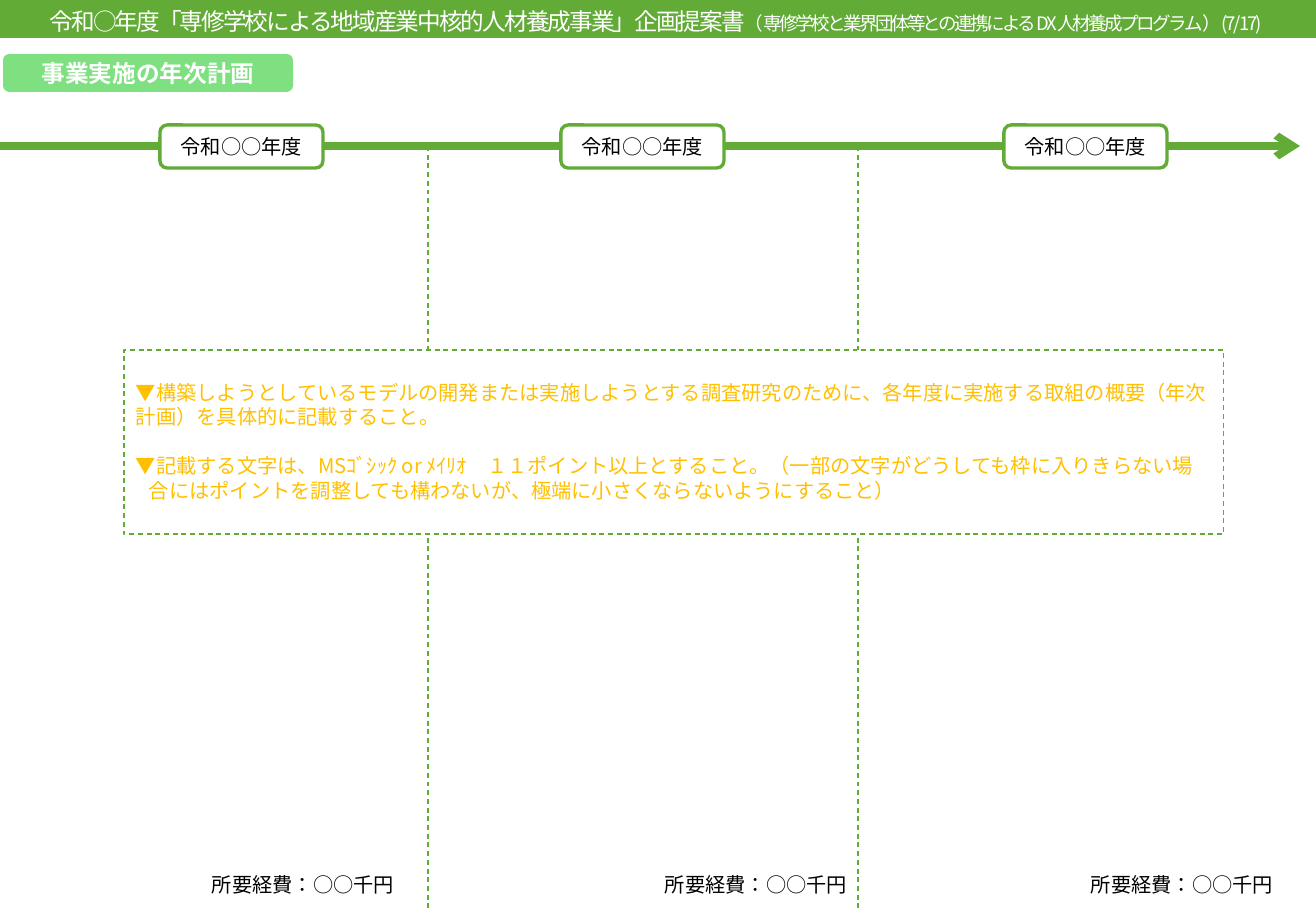
from lxml import etree
from pptx import Presentation
from pptx.dml.color import RGBColor
from pptx.enum.dml import MSO_LINE
from pptx.enum.lang import MSO_LANGUAGE_ID
from pptx.enum.shapes import MSO_CONNECTOR, MSO_SHAPE
from pptx.enum.text import MSO_ANCHOR, MSO_AUTO_SIZE, PP_ALIGN
from pptx.oxml.ns import qn
from pptx.util import Emu, Pt

EMU_PER_PX = 7526
SLIDE_WIDTH, SLIDE_HEIGHT = 1316, 911
HEADER_HEIGHT = 38
TIMELINE_TOP = 146
GREEN, LIGHT_GREEN, WHITE, BLACK, AMBER = "62AB37", "7EE081", "FFFFFF", "000000", "FFC000"
JAPANESE_FONT, LABEL_FONT = "Noto Sans CJK JP", "Karla"
LINE_PITCH = 14.5

HEADING_RUNS = [
    ("令和○年度「専修学校による地域産業中核的人材養成事業」企画提案書", 14, -1.2),
    ("（", 11, -1.2),
    ("専修学校と業界団体等との連携によるDX人材養成プログラム", 11, -1.6),
    ("）(7/17)", 11, -1.2),
]
NOTES = [
    ("▼構築しようとしているモデルの開発または実施しようとする調査研究のために、"
     "各年度に実施する取組の概要（年次計画）を具体的に記載すること。", 0, 0),
    ("▼記載する文字は、MSｺﾞｼｯｸ or ﾒｲﾘｵ\u3000１１ポイント以上とすること。"
     "（一部の文字がどうしても枠に入りきらない場合にはポイントを調整しても構わないが、"
     "極端に小さくならないようにすること）", 13, LINE_PITCH),
]
YEAR_LABEL_LEFTS = [160, 561, 1004]
COST_LEFTS = [212, 665, 1091]
DIVIDER_LEFTS = [428, 858]
YEAR_LABEL_WIDTH, YEAR_LABEL_HEIGHT = 163, 43
COST_WIDTH, COST_HEIGHT = 190, 30


def px(length):
    return Emu(length * EMU_PER_PX)


def color(value):
    return RGBColor.from_string(value)


def add_text(paragraph, text, size=12, font=JAPANESE_FONT, text_color=BLACK, bold=False, spacing=0):
    run = paragraph.add_run()
    run.text = text
    run.font.size = Pt(size)
    run.font.name = font
    run.font.bold = bold
    run.font.color.rgb = color(text_color)
    run.font.language_id = MSO_LANGUAGE_ID.JAPANESE
    properties = run._r.get_or_add_rPr()
    properties.set("spc", str(round(spacing * 100)))
    east_asian = etree.Element(qn("a:ea"), typeface=JAPANESE_FONT)
    properties.find(qn("a:latin")).addnext(east_asian)


def format_frame(shape, insets=(0, 0, 0, 0), anchor=MSO_ANCHOR.MIDDLE, wrap=True):
    frame = shape.text_frame
    frame.word_wrap = wrap
    frame.auto_size = MSO_AUTO_SIZE.NONE
    frame.vertical_anchor = anchor
    frame.margin_left, frame.margin_top, frame.margin_right, frame.margin_bottom = map(px, insets)
    return frame


def format_line(line, width, dash=None):
    line.color.rgb = color(GREEN)
    line.width = Pt(width)
    line.dash_style = dash


def add_box(slide, kind, box, fill):
    shape = slide.shapes.add_shape(kind, *map(px, box))
    shape.shadow.inherit = False
    shape.fill.solid()
    shape.fill.fore_color.rgb = color(fill)
    shape.line.fill.background()
    return shape


def add_line(slide, start, end, width, dash=None):
    connector = slide.shapes.add_connector(MSO_CONNECTOR.STRAIGHT, *map(px, start + end))
    format_line(connector.line, width, dash)
    etree.SubElement(connector._element.spPr, qn("a:effectLst"))
    return connector


def add_label(slide, box, text, fill, **text_format):
    shape = add_box(slide, MSO_SHAPE.ROUNDED_RECTANGLE, box, fill)
    paragraph = format_frame(shape).paragraphs[0]
    paragraph.alignment = PP_ALIGN.CENTER
    add_text(paragraph, text, font=LABEL_FONT, **text_format)
    return shape


def add_header(slide, box):
    left, top, width, height = box
    add_box(slide, MSO_SHAPE.RECTANGLE, box, GREEN)
    title = slide.shapes.title
    title.left, title.top, title.width, title.height = map(px, (left, top + 1, width - 4, height + 2))
    title.element.getparent().append(title.element)
    paragraph = format_frame(title).paragraphs[0]
    paragraph.alignment = PP_ALIGN.CENTER
    for text, size, spacing in HEADING_RUNS:
        add_text(paragraph, text, size=size, text_color=WHITE, spacing=spacing)


def add_timeline(slide, box):
    left, top, width, height = box
    bottom = top + height
    for divider_left in DIVIDER_LEFTS:
        divider_x = left + divider_left
        add_line(slide, (divider_x, top), (divider_x, bottom), 0.75, MSO_LINE.DASH)

    time_axis = add_line(slide, (left, top), (left + width, top), 4.5)
    etree.SubElement(time_axis.line._get_or_add_ln(), qn("a:tailEnd"), type="arrow")

    label_top = top - YEAR_LABEL_HEIGHT // 2
    for label_left in YEAR_LABEL_LEFTS:
        label_box = (left + label_left, label_top, YEAR_LABEL_WIDTH, YEAR_LABEL_HEIGHT)
        label = add_label(slide, label_box, "令和○○年度", WHITE)
        format_line(label.line, 2)

    for cost_left in COST_LEFTS:
        cost_box = (left + cost_left, bottom - 42, COST_WIDTH, COST_HEIGHT)
        cost = slide.shapes.add_textbox(*map(px, cost_box))
        add_text(format_frame(cost, wrap=False).paragraphs[0], "所要経費：○○千円")


def add_notes(slide, box):
    shape = add_box(slide, MSO_SHAPE.RECTANGLE, box, WHITE)
    format_line(shape.line, 0.75, MSO_LINE.DASH)
    frame = format_frame(shape, insets=(12, 30, 12, 6), anchor=MSO_ANCHOR.TOP)
    for _ in NOTES[1:]:
        frame.add_paragraph()
    for paragraph, (text, indent, space_before) in zip(frame.paragraphs, NOTES):
        paragraph.alignment = PP_ALIGN.LEFT
        paragraph.line_spacing = Pt(LINE_PITCH)
        paragraph.space_before = Pt(space_before)
        properties = paragraph._p.get_or_add_pPr()
        properties.set("marL", str(px(indent)))
        properties.set("indent", str(px(-indent)))
        add_text(paragraph, text, text_color=AMBER)


def add_section_heading(slide, box):
    add_label(slide, box, "事業実施の年次計画", LIGHT_GREEN, size=14, text_color=WHITE, bold=True)


def main():
    presentation = Presentation()
    presentation.slide_width = px(SLIDE_WIDTH)
    presentation.slide_height = px(SLIDE_HEIGHT)
    title_only_layout = presentation.slide_layouts[5]
    slide = presentation.slides.add_slide(title_only_layout)
    add_timeline(slide, (0, TIMELINE_TOP, 1300, SLIDE_HEIGHT - TIMELINE_TOP))
    add_notes(slide, (124, 350, 1100, 184))
    add_section_heading(slide, (3, 54, 290, 38))
    add_header(slide, (0, 0, SLIDE_WIDTH, HEADER_HEIGHT))
    presentation.save("out.pptx")


if __name__ == "__main__":
    main()
